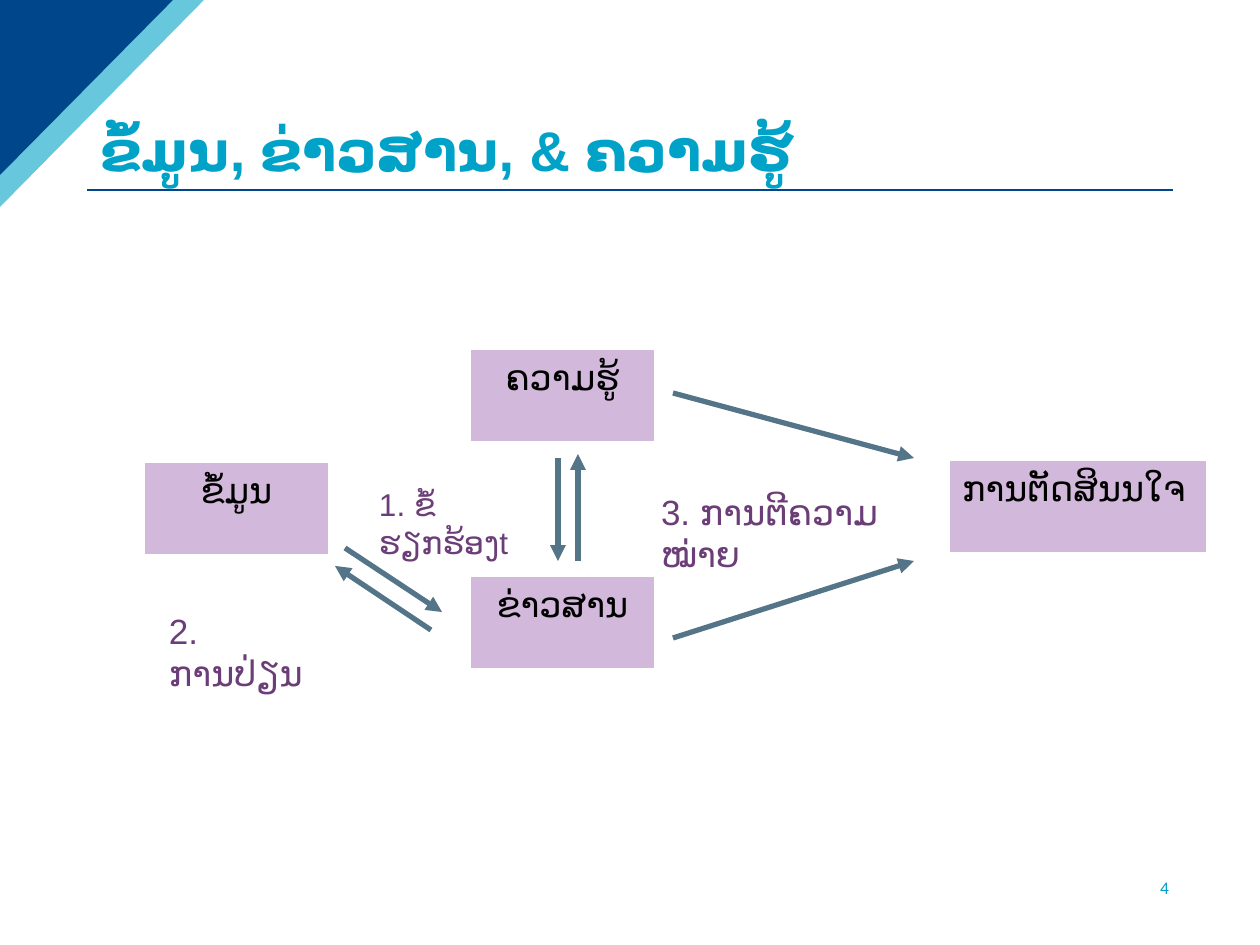
from lxml import etree
from pptx import Presentation
from pptx.dml.color import RGBColor
from pptx.enum.shapes import MSO_CONNECTOR, MSO_SHAPE
from pptx.enum.text import MSO_ANCHOR, MSO_AUTO_SIZE, PP_ALIGN
from pptx.oxml.ns import qn
from pptx.util import Emu, Pt

PX = 914400 / 126
SLIDE_SIZE = (1260, 945)
TITLE_ONLY = 5

LEFT, CENTER, RIGHT = PP_ALIGN.LEFT, PP_ALIGN.CENTER, PP_ALIGN.RIGHT
TOP, MIDDLE, BOTTOM = MSO_ANCHOR.TOP, MSO_ANCHOR.MIDDLE, MSO_ANCHOR.BOTTOM
STRAIGHT, RECTANGLE = MSO_CONNECTOR.STRAIGHT, MSO_SHAPE.RECTANGLE
NO_AUTOFIT = MSO_AUTO_SIZE.NONE

NAVY, CYAN, WHITE, BLACK = "00468B", "00A2C7", "FFFFFF", "000000"
LILAC, PURPLE, SLATE = "D2B8DA", "6C3E78", "547487"


def px(length):
    return Emu(round(length * PX))


def rgb(hex_string):
    return RGBColor.from_string(hex_string)


def write(frame, text, *, size=20, color=BLACK, font="Arial", bold=False,
          align=LEFT, anchor=TOP, inset=(13, 6), spacing=None):
    """Put one formatted paragraph in a text frame; inset is (sides, top and bottom)."""
    frame.word_wrap = True
    frame.auto_size = NO_AUTOFIT
    frame.vertical_anchor = anchor
    frame.margin_left = frame.margin_right = px(inset[0])
    frame.margin_top = frame.margin_bottom = px(inset[1])
    paragraph = frame.paragraphs[0]
    paragraph.alignment = align
    paragraph.line_spacing = spacing
    run = paragraph.add_run()
    run.text = text
    run.font.size = Pt(size)
    run.font.name = font
    run.font.bold = bold
    run.font.color.rgb = rgb(color)


class DiagramSlide:
    """Style and drawing methods for the current slide."""

    box_height = 93
    box_border = 1.62
    arrow_width = 3

    def __init__(self, slide):
        self.slide = slide
        self.shapes = slide.shapes

    def title(self, text, left, top, width, height):
        heading = self.shapes.title
        heading.left, heading.top = px(left), px(top)
        heading.width, heading.height = px(width), px(height)
        write(heading.text_frame, text, size=32, color=CYAN, bold=True,
              anchor=BOTTOM, spacing=0.9)

    def corner(self, width, height, color, opacity=100):
        """Fill the top left corner with a triangle; opacity is in percent."""
        builder = self.shapes.build_freeform(0, 0, scale=PX)
        builder.add_line_segments([(width, 0), (0, height)], close=True)
        triangle = builder.convert_to_shape()
        triangle.shadow.inherit = False
        triangle.line.fill.background()
        triangle.fill.solid()
        triangle.fill.fore_color.rgb = rgb(color)
        if opacity < 100:
            fill_color = triangle._element.spPr.find(".//" + qn("a:srgbClr"))
            etree.SubElement(fill_color, qn("a:alpha"), val=str(opacity * 1000))

    def box(self, text, left, top, width=185, align=CENTER):
        node = self.shapes.add_shape(RECTANGLE, px(left), px(top),
                                     px(width), px(self.box_height))
        node.shadow.inherit = False
        node.fill.solid()
        node.fill.fore_color.rgb = rgb(LILAC)
        node.line.color.rgb = rgb(WHITE)
        node.line.width = Pt(self.box_border)
        write(node.text_frame, text, align=align)

    def label(self, text, left, top, width, height, **text_format):
        caption = self.shapes.add_textbox(px(left), px(top), px(width), px(height))
        write(caption.text_frame, text, **text_format)

    def line(self, start, end, color, width):
        connector = self.shapes.add_connector(
            STRAIGHT, *(px(value) for value in (*start, *end)))
        connector.line.color.rgb = rgb(color)
        connector.line.width = Pt(width)
        etree.SubElement(connector._element.spPr, qn("a:effectLst"))
        return connector

    def arrow(self, start, end):
        connector = self.line(start, end, SLATE, self.arrow_width)
        outline = connector.line._get_or_add_ln()
        etree.SubElement(outline, qn("a:tailEnd"), type="triangle")


def main():
    deck = Presentation()
    deck.slide_width, deck.slide_height = (px(side) for side in SLIDE_SIZE)
    page = DiagramSlide(deck.slides.add_slide(deck.slide_layouts[TITLE_ONLY]))

    page.line((87, 190), (1173, 190), NAVY, 0.75)
    page.corner(204, 207, CYAN, opacity=60)
    page.corner(173, 175, NAVY)
    page.title("ຂໍ້ມູນ, ຂ່າວສານ, & ຄວາມຮູ້", 87, 50, 1086, 140)
    page.label("4", 974, 874, 208, 27, size=10, color=CYAN, font="Calibri",
               align=RIGHT, anchor=MIDDLE)

    page.box("ຂ່າວສານ", 470, 576)
    page.box("ຂໍ້ມູນ", 144, 462)
    page.box("ການຕັດສິນນໃຈ", 949, 460, width=258, align=LEFT)
    page.box("ຄວາມຮູ້", 470, 349)

    steps = [
        ("1. ຂໍ້ຮຽກຮ້ອງt", 379, 485, 160, 38, 18),
        ("2. ການປ່ຽນ", 169, 609, 154, 43, 20),
        ("3. ການຕີຄວາມໝ່າຍ", 661, 490, 258, 43, 20),
    ]
    for text, left, top, width, height, size in steps:
        page.label(text, left, top, width, height, size=size, color=PURPLE,
                   inset=(0, 0))

    flows = [
        ((345, 548), (442, 612)),  # data to information
        ((431, 630), (335, 566)),  # information to data
        ((558, 458), (558, 561)),  # knowledge to information
        ((578, 561), (578, 454)),  # information to knowledge
        ((673, 638), (914, 561)),  # information to decision
        ((673, 393), (914, 458)),  # knowledge to decision
    ]
    for start, end in flows:
        page.arrow(start, end)

    deck.save("out.pptx")


if __name__ == "__main__":
    main()
